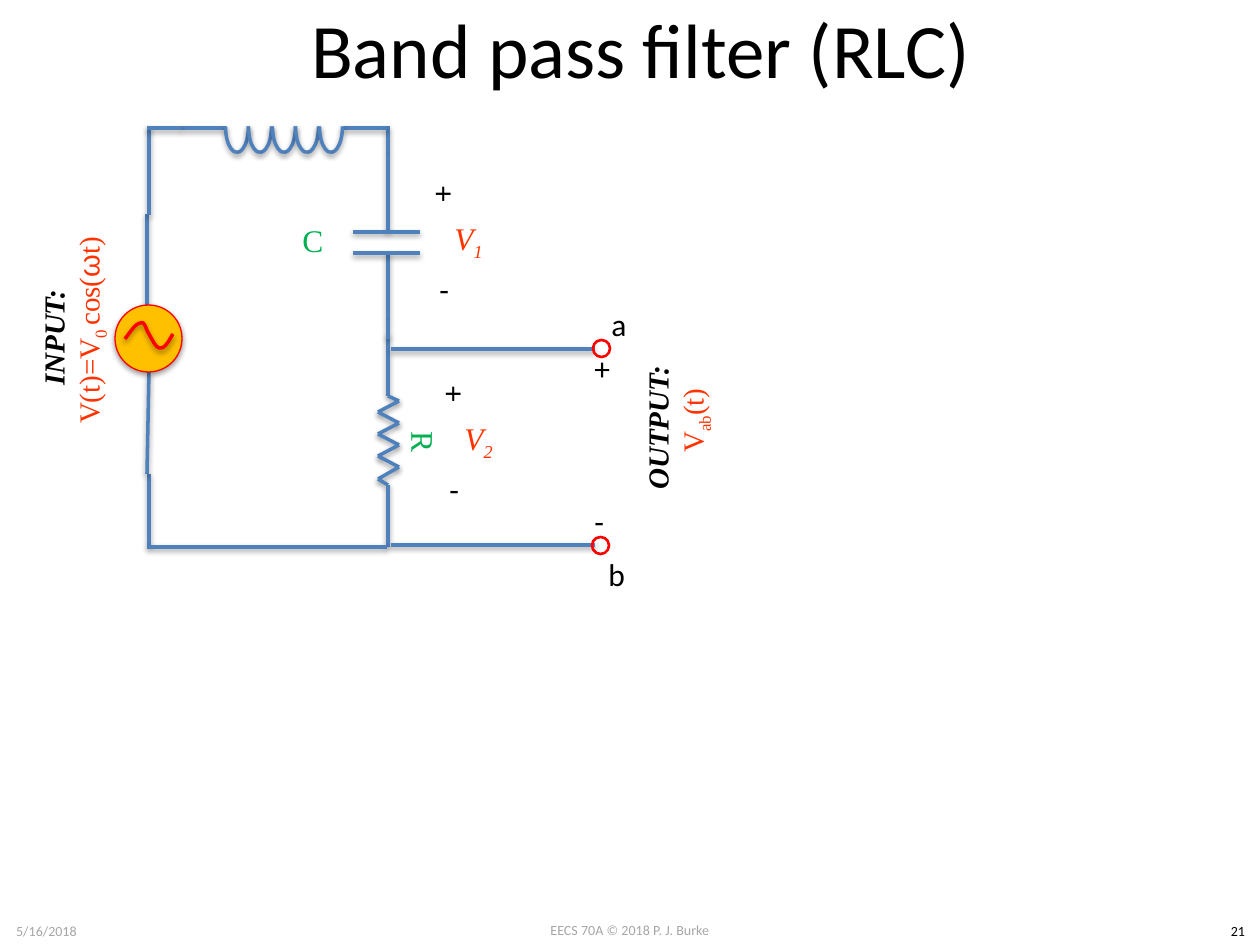
from itertools import pairwise
from lxml.etree import SubElement
from pptx import Presentation
from pptx.dml.color import RGBColor
from pptx.enum.shapes import MSO_CONNECTOR as LINE, MSO_SHAPE as SHAPE
from pptx.enum.text import MSO_ANCHOR as ANCHOR, MSO_AUTO_SIZE as FIT, PP_ALIGN as ALIGN
from pptx.oxml.ns import qn
from pptx.util import Pt

PX = 914400 / 126
COLORS = {
    "ink": "000000", "footer": "A6A6A6", "wire": "4F81BD", "part": "00B050",
    "voltage": "FF3300", "source": "FFC000", "red": "FF0000",
}
SERIF = "Times New Roman"

prs = Presentation()
prs.slide_width, prs.slide_height = round(1260 * PX), round(945 * PX)
slide = prs.slides.add_slide(prs.slide_layouts[6])
shapes = slide.shapes


def text(paragraphs, at, size=18, color="ink", font="Calibri", align=ALIGN.CENTER,
         anchor=ANCHOR.MIDDLE, rotation=0, label=False, italic=False):
    box = shapes.add_textbox(*(round(v * PX) for v in at))
    box.rotation = rotation
    frame = box.text_frame
    frame.word_wrap = not label
    frame.auto_size = FIT.SHAPE_TO_FIT_TEXT if label else FIT.NONE
    frame.vertical_anchor = ANCHOR.TOP if label else anchor
    for i, runs in enumerate(paragraphs):
        paragraph = frame.paragraphs[0] if i == 0 else frame.add_paragraph()
        paragraph.alignment = ALIGN.LEFT if label else align
        for words, look in runs:
            run = paragraph.add_run()
            run.text = words
            run.font.size = Pt(size)
            run.font.name = look.get("font", font)
            run.font.bold = look.get("bold", False)
            run.font.italic = look.get("italic", italic)
            run.font.color.rgb = RGBColor.from_string(COLORS[look.get("color", color)])
            if look.get("sub"):
                run.font._element.set("baseline", "-25000")


def outline(item, color="wire", width=2, shadow=True):
    item.line.color.rgb = RGBColor.from_string(COLORS[color])
    item.line.width = Pt(width)
    properties = item._element.spPr
    for old in properties.findall(qn("a:effectLst")):
        properties.remove(old)
    effects = SubElement(properties, qn("a:effectLst"))
    if shadow:
        cast = SubElement(effects, qn("a:outerShdw"), blurRad="40000", dist="20000",
                          dir="5400000", rotWithShape="0")
        black = SubElement(cast, qn("a:srgbClr"), val=COLORS["ink"])
        SubElement(black, qn("a:alpha"), val="38000")


text([[("EECS 70A © 2018 P. J. Burke", {})]], (483, 915, 294, 30), size=8, color="footer")
text([[("5/16/2018", {})]], (0, 916, 93, 30), size=8, color="footer")
text([[("21", {})]], (1216, 916, 44, 30), size=8)
text([[("Band pass filter (RLC)", {})]], (74, -31, 1134, 157), size=44)

zigzag = [(399 if i % 2 == 0 else 378, 401 + 78 * i // 7) for i in range(8)]
resistor = [(388, 334), (388, 396), *zigzag, (388, 485), (388, 547)]
wires = [
    *pairwise(resistor),
    ((149, 474), (149, 546)),
    ((388, 126), (388, 154)),
    ((388, 154), (388, 232)),
    ((388, 253), (388, 320)),
    ((388, 320), (388, 339)),
    ((420, 232), (353, 232)),
    ((420, 253), (353, 253)),
    ((147, 474), (149, 372)),
    ((147, 305), (147, 214)),
    ((149, 215), (149, 126)),
    ((391, 349), (595, 349)),
    ((391, 545), (595, 545)),
    ((343, 128), (387, 128)),
    ((181, 128), (226, 128)),
    ((181, 128), (147, 128)),
    ((147, 547), (387, 547)),
]
for start, end in wires:
    outline(shapes.add_connector(LINE.STRAIGHT, *(round(v * PX) for v in (*start, *end))))

for turn in range(5):
    for flipped in (False, True):
        coil = shapes.add_shape(SHAPE.ARC, *(round(v * PX) for v in (211 + 47 * turn // 2, 115, 52, 23)))
        coil.rotation = 90
        if flipped:
            coil._element.spPr.find(qn("a:xfrm")).set("flipV", "1")
        coil.fill.background()
        outline(coil)

source = shapes.add_shape(SHAPE.OVAL, *(round(v * PX) for v in (115, 305, 67, 67)))
source.fill.solid()
source.fill.fore_color.rgb = RGBColor.from_string(COLORS["source"])
outline(source, "red", 0.75)

sine_knots = [(125, 339), (131, 331), (136, 323), (141, 323), (145, 321), (146, 330), (149, 334),
              (152, 339), (156, 349), (161, 348), (165, 348), (169, 341), (173, 334)]
sine_points = []
for first in range(0, 12, 3):
    for step in range(13):
        t = step / 12
        weights = ((1 - t) ** 3, 3 * t * (1 - t) ** 2, 3 * t * t * (1 - t), t ** 3)
        curve = sine_knots[first:first + 4]
        sine_points.append(tuple(
            round(PX * sum(w * knot[axis] for w, knot in zip(weights, curve))) for axis in (0, 1)))
builder = shapes.build_freeform(*sine_points[0])
builder.add_line_segments(sine_points[1:], close=False)
sine = builder.convert_to_shape()
sine.fill.background()
outline(sine, "red")

for left, top in ((593, 340), (592, 537)):
    terminal = shapes.add_shape(SHAPE.OVAL, *(round(v * PX) for v in (left, top, 17, 17)))
    terminal.fill.background()
    outline(terminal, "red", 1.5, shadow=False)

text([[("R", {})]], (349, 396, 150, 92), color="part", font=SERIF, rotation=90)
text([[("C", {})]], (238, 194, 150, 92), color="part", font=SERIF)

for number, left, top in (("1", 420, 202), ("2", 430, 402)):
    text([[("V", {}), (number, {"sub": True})]], (left, top, 97, 77),
         color="voltage", font=SERIF, italic=True)
    text([[("+", {})]], (left + 5, top - 32, 42, 50), rotation=90, label=True)
    text([[("-", {})]], (left + 7, top + 62, 35, 50), label=True)

for words, left, top, width in (("a", 599, 299, 40), ("b", 596, 549, 43),
                                ("+", 582, 343, 42), ("-", 582, 496, 35)):
    text([[(words, {})]], (left, top, width, 50), label=True)

heading = {"bold": True, "italic": True, "color": "ink"}
text([[("INPUT:  ", heading)],
      [("V(t)=V", {}), ("0 ", {"sub": True}), ("cos(", {}), ("ω", {"font": "Arial"}), ("t)", {})]],
     (-60, 292, 266, 77), size=16.6, color="voltage", font=SERIF, rotation=270)
text([[("OUTPUT:  ", heading)],
      [("V", {}), ("ab", {"sub": True}), ("(t)", {})]],
     (544, 382, 266, 77), size=16.6, color="voltage", font=SERIF, rotation=270)

prs.save("out.pptx")
